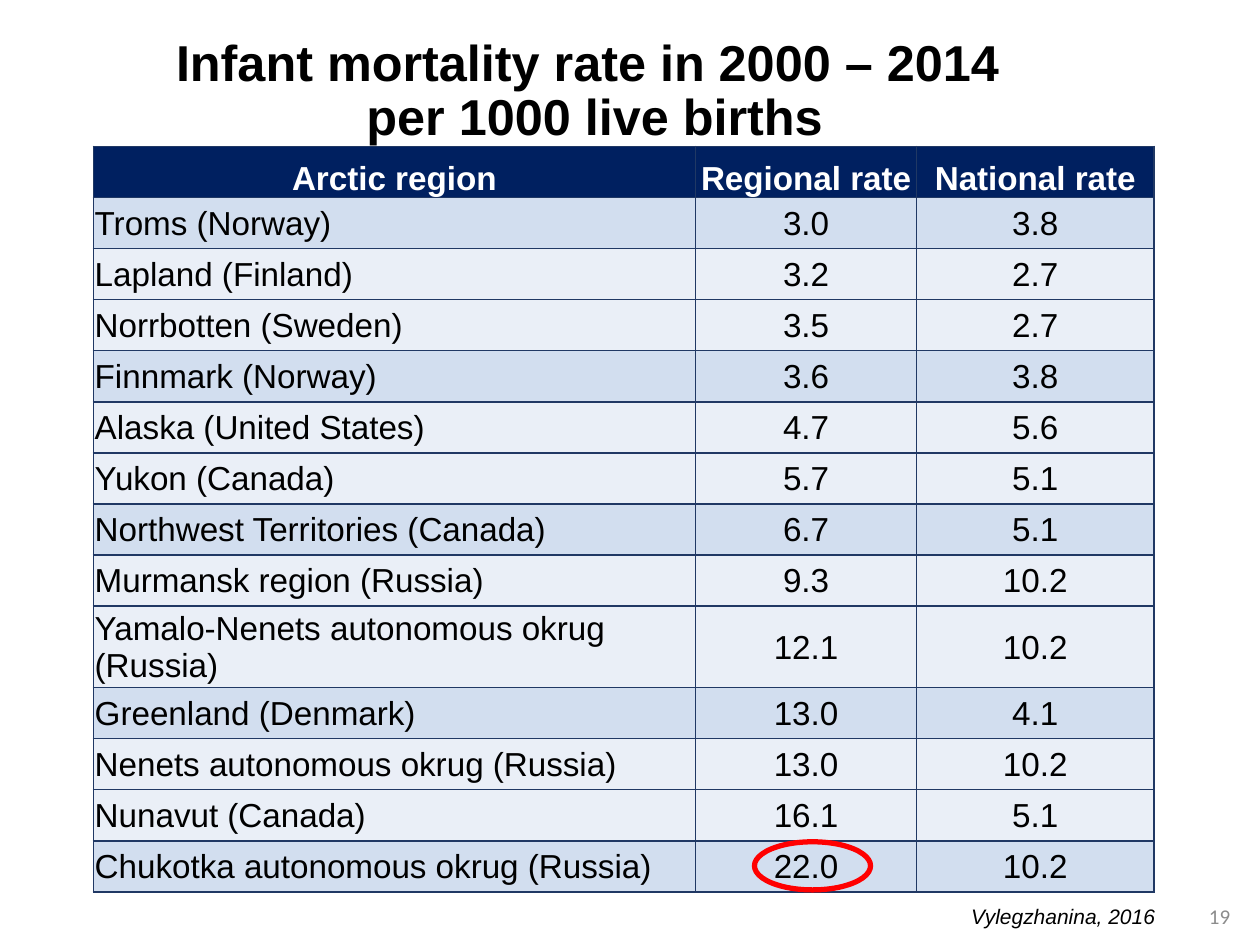
from lxml.etree import SubElement
from pptx import Presentation
from pptx.dml.color import RGBColor
from pptx.enum.shapes import MSO_SHAPE
from pptx.enum.text import MSO_ANCHOR as Anchor, MSO_AUTO_SIZE as AutoSize, PP_ALIGN as Align
from pptx.oxml.ns import qn
from pptx.util import Cm, Pt

BLACK = RGBColor(0x00, 0x00, 0x00)
WHITE = RGBColor(0xFF, 0xFF, 0xFF)
GRAY = RGBColor(0x8C, 0x8C, 0x8C)
RED = RGBColor(0xFF, 0x00, 0x00)
NAVY = RGBColor(0x00, 0x20, 0x60)
BORDER = RGBColor(0x20, 0x38, 0x64)
BAND_DARK = RGBColor(0xD2, 0xDE, 0xEF)
BAND_LIGHT = RGBColor(0xEA, 0xEF, 0xF7)

TITLE = ["Infant mortality rate in 2000 – 2014 ", "per 1000 live births"]
HEADER = ("Arctic region", "Regional rate", "National rate")
RATES = [
    ("Troms (Norway)", "3.0", "3.8"),
    ("Lapland (Finland)", "3.2", "2.7"),
    ("Norrbotten (Sweden)", "3.5", "2.7"),
    ("Finnmark (Norway)", "3.6", "3.8"),
    ("Alaska (United States)", "4.7", "5.6"),
    ("Yukon (Canada)", "5.7", "5.1"),
    ("Northwest Territories (Canada)", "6.7", "5.1"),
    ("Murmansk region (Russia)", "9.3", "10.2"),
    ("Yamalo-Nenets autonomous okrug (Russia)", "12.1", "10.2"),
    ("Greenland (Denmark)", "13.0", "4.1"),
    ("Nenets autonomous okrug (Russia)", "13.0", "10.2"),
    ("Nunavut (Canada)", "16.1", "5.1"),
    ("Chukotka autonomous okrug (Russia)", "22.0", "10.2"),
]
COL_WIDTHS = (12.14, 4.46, 4.78)
ROW_HEIGHT = 1.03
TALL_ROW_HEIGHT = 1.61
TALL_ROW = 9


class SlideBuilder:
    font = "Arial"

    def __init__(self, prs):
        self.s = prs.slides.add_slide(prs.slide_layouts[5])

    def run(self, p, text, size, color=BLACK, bold=False, italic=False, font=None):
        r = p.add_run()
        r.text = text
        r.font.name = font or self.font
        r.font.size = Pt(size)
        r.font.bold = bold
        r.font.italic = italic
        r.font.color.rgb = color

    def title(self, lines, x, y, w, h):
        sp = self.s.shapes.title
        sp.left, sp.top, sp.width, sp.height = Cm(x), Cm(y), Cm(w), Cm(h)
        tf = sp.text_frame
        tf.auto_size = AutoSize.NONE
        tf.vertical_anchor = Anchor.MIDDLE
        p = tf.paragraphs[0]
        p.alignment = Align.CENTER
        p.line_spacing = 0.9
        for i, line in enumerate(lines):
            if i:
                p.add_line_break()
            self.run(p, line, 28.8, bold=True)

    def text(self, text, x, y, w, h, align=Align.LEFT, anchor=Anchor.TOP, wrap=True, **style):
        tf = self.s.shapes.add_textbox(Cm(x), Cm(y), Cm(w), Cm(h)).text_frame
        tf.word_wrap = wrap
        tf.vertical_anchor = anchor
        p = tf.paragraphs[0]
        p.alignment = align
        self.run(p, text, 12, **style)

    def borders(self, cell):
        tc_pr = cell._tc.get_or_add_tcPr()
        for side in ("lnL", "lnR", "lnT", "lnB"):
            ln = SubElement(tc_pr, qn(f"a:{side}"), w=str(Pt(1)))
            fill = SubElement(ln, qn("a:solidFill"))
            SubElement(fill, qn("a:srgbClr"), val=str(BORDER))

    def cell(self, cell, text, fill, align, anchor, **style):
        cell.margin_left = cell.margin_right = cell.margin_top = Cm(0.03)
        cell.margin_bottom = 0
        cell.vertical_anchor = anchor
        self.borders(cell)
        cell.fill.solid()
        cell.fill.fore_color.rgb = fill
        p = cell.text_frame.paragraphs[0]
        p.alignment = align
        self.run(p, text, 19, **style)

    def table(self, header, rows, x, y):
        heights = [ROW_HEIGHT] * (len(rows) + 1)
        heights[TALL_ROW] = TALL_ROW_HEIGHT
        table = self.s.shapes.add_table(
            len(heights), len(header), Cm(x), Cm(y), Cm(sum(COL_WIDTHS)), Cm(sum(heights))
        ).table
        for col, width in zip(table.columns, COL_WIDTHS):
            col.width = Cm(width)
        for row, height in zip(table.rows, heights):
            row.height = Cm(height)
        for j, text in enumerate(header):
            self.cell(table.cell(0, j), text, NAVY, Align.CENTER, Anchor.BOTTOM,
                      color=WHITE, bold=True)
        for i, row in enumerate(rows):
            fill = BAND_LIGHT if i % 3 else BAND_DARK
            for j, text in enumerate(row):
                align = Align.CENTER if j else Align.LEFT
                self.cell(table.cell(i + 1, j), text, fill, align, Anchor.MIDDLE)

    def ring(self, x, y, w, h):
        sp = self.s.shapes.add_shape(MSO_SHAPE.OVAL, Cm(x), Cm(y), Cm(w), Cm(h))
        sp.shadow.inherit = False
        sp.fill.background()
        sp.line.color.rgb = RED
        sp.line.width = Pt(3)


def main():
    prs = Presentation()
    prs.slide_width, prs.slide_height = Cm(25.4), Cm(19.05)
    slide = SlideBuilder(prs)
    slide.text("19", 19.33, 17.96, 5.72, 1.02, Align.RIGHT, Anchor.MIDDLE,
               color=GRAY, font="Calibri")
    slide.title(TITLE, 0, 1.02, 23.98, 1.68)
    slide.table(HEADER, RATES, 1.88, 2.95)
    slide.ring(15.21, 16.97, 2.34, 0.97)
    slide.text("Vylegzhanina, 2016", 19.33, 18.08, 4.24, 0.76, wrap=False, italic=True)
    prs.save("out.pptx")


if __name__ == "__main__":
    main()
